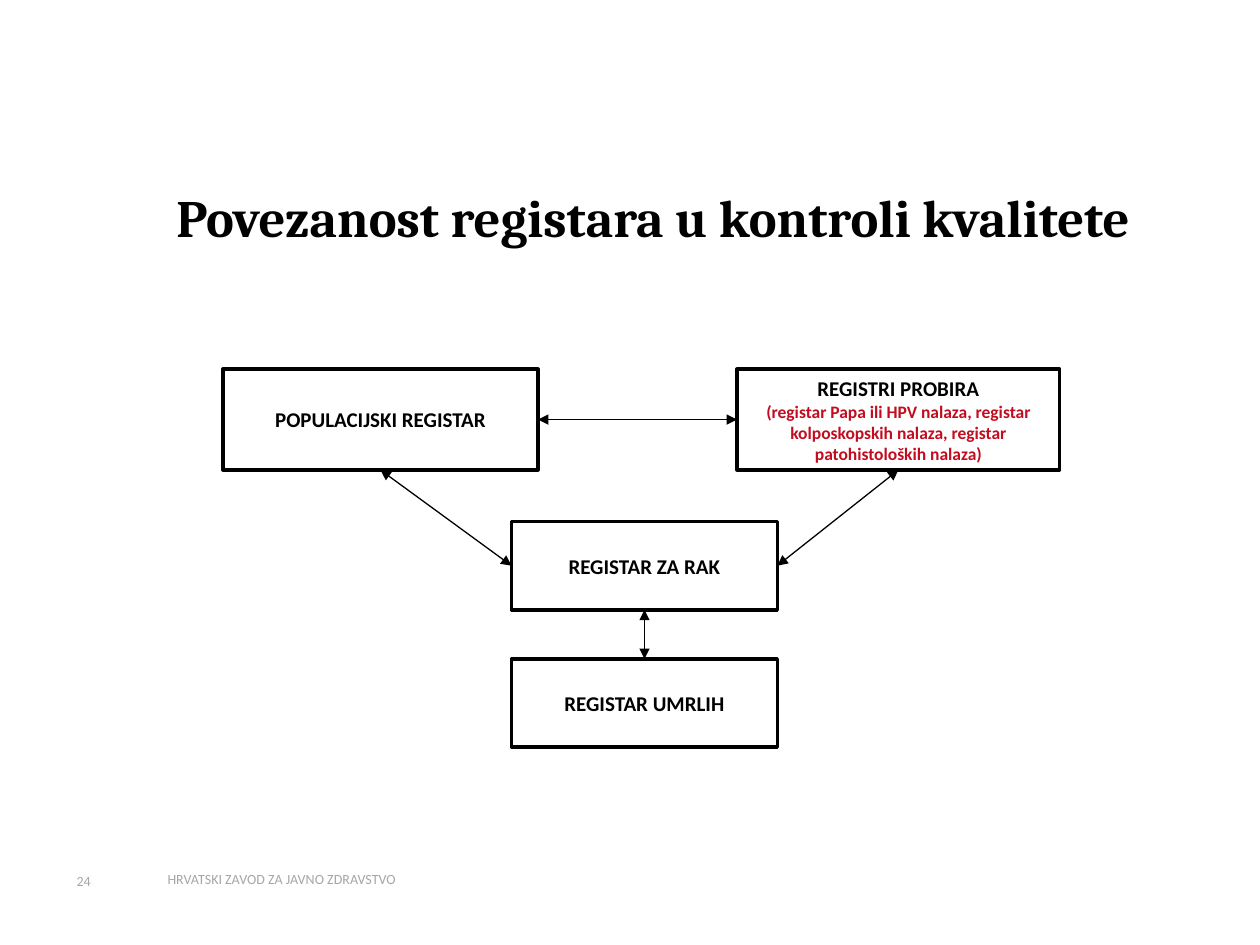
from lxml.etree import SubElement
from pptx import Presentation
from pptx.dml.color import RGBColor
from pptx.enum.shapes import MSO_CONNECTOR, MSO_SHAPE
from pptx.enum.text import MSO_ANCHOR, PP_ALIGN
from pptx.oxml.ns import qn
from pptx.util import Emu, Pt

PX = 9144  # EMU per px, 100 px to the inch
COLORS = {"ink": "000000", "paper": "FFFFFF", "detail": "C20D20", "footer": "A6A6A6"}
TOP, BOTTOM, LEFT, RIGHT = 0, 2, 1, 3  # connection sites of a rectangle


def px(*lengths):
    return [Emu(length * PX) for length in lengths]


def color(name):
    return RGBColor.from_string(COLORS[name])


def style(para, size, ink, face="Calibri", bold=False, align=PP_ALIGN.LEFT):
    para.alignment = align
    para.font.size = Pt(size)
    para.font.name = face
    para.font.bold = bold
    para.font.color.rgb = color(ink)


def add_title(page, box, text):
    title = page.shapes.title
    title.left, title.top, title.width, title.height = px(*box)
    frame = title.text_frame
    frame.text = text
    frame.word_wrap = True
    frame.vertical_anchor = MSO_ANCHOR.BOTTOM
    style(frame.paragraphs[0], 30, "ink", "Cambria", True)


def add_footer(page, box, number, owner):
    left, top, width, height = box
    number_width = 133
    parts = [
        (number, left, number_width, 20, PP_ALIGN.CENTER),
        (owner, left + number_width, width - number_width, 17, PP_ALIGN.LEFT),
    ]
    for text, part_left, part_width, part_height, align in parts:
        label = page.shapes.add_textbox(*px(part_left, top, part_width, part_height))
        frame = label.text_frame
        frame.word_wrap = True
        frame.margin_left = frame.margin_right = frame.margin_top = frame.margin_bottom = 0
        frame.vertical_anchor = MSO_ANCHOR.MIDDLE
        frame.text = text
        style(frame.paragraphs[0], 8, "footer", align=align)


def add_register(page, box, name, detail=None):
    register = page.shapes.add_shape(MSO_SHAPE.RECTANGLE, *px(*box))
    register.shadow.inherit = False
    register.fill.solid()
    register.fill.fore_color.rgb = color("paper")
    register.line.color.rgb = color("ink")
    register.line.width = Pt(2)
    frame = register.text_frame
    frame.word_wrap = True
    frame.vertical_anchor = MSO_ANCHOR.MIDDLE
    frame.text = name
    style(frame.paragraphs[0], 12, "ink", bold=True, align=PP_ALIGN.CENTER)
    if detail:
        para = frame.add_paragraph()
        para.text = detail
        style(para, 10, "detail", bold=True, align=PP_ALIGN.CENTER)
    return register


def add_link(page, start, start_site, end, end_site):
    link = page.shapes.add_connector(MSO_CONNECTOR.STRAIGHT, 0, 0, 0, 0)
    link.begin_connect(start, start_site)
    link.end_connect(end, end_site)
    link.line.color.rgb = color("ink")
    link.line.width = Pt(0.75)
    # Arrowheads at both ends, no shadow
    for end_tag in ("a:headEnd", "a:tailEnd"):
        SubElement(link.line._get_or_add_ln(), qn(end_tag), type="triangle")
    SubElement(link._element.spPr, qn("a:effectLst"))


def add_register_diagram(page, box):
    left, top, width, height = box
    side_height, core_width, core_height = 80, 211, 70
    core_left = left + 229

    # Registers
    screening = add_register(
        page, (left + width - 256, top, 256, side_height), "REGISTRI PROBIRA",
        "(registar Papa ili HPV nalaza, registar kolposkopskih nalaza, "
        "registar patohistoloških nalaza)")
    population = add_register(page, (left, top, 250, side_height), "POPULACIJSKI REGISTAR")
    cancer = add_register(
        page, (core_left, top + 121, core_width, core_height), "REGISTAR ZA RAK")
    deaths = add_register(
        page, (core_left, top + height - core_height, core_width, core_height),
        "REGISTAR UMRLIH")

    # Two-way links
    add_link(page, population, RIGHT, screening, LEFT)
    add_link(page, cancer, LEFT, population, BOTTOM)
    add_link(page, cancer, RIGHT, screening, BOTTOM)
    add_link(page, cancer, BOTTOM, deaths, TOP)


def main():
    deck = Presentation()
    deck.slide_width, deck.slide_height = px(1000, 750)
    page = deck.slides.add_slide(deck.slide_layouts[5])
    add_footer(page, (0, 689, 949, 20), "24", "HRVATSKI ZAVOD ZA JAVNO ZDRAVSTVO")
    add_title(page, (130, 147, 821, 55), "Povezanost registara u kontroli kvalitete")
    add_register_diagram(page, (177, 293, 664, 300))
    deck.save("out.pptx")


if __name__ == "__main__":
    main()
